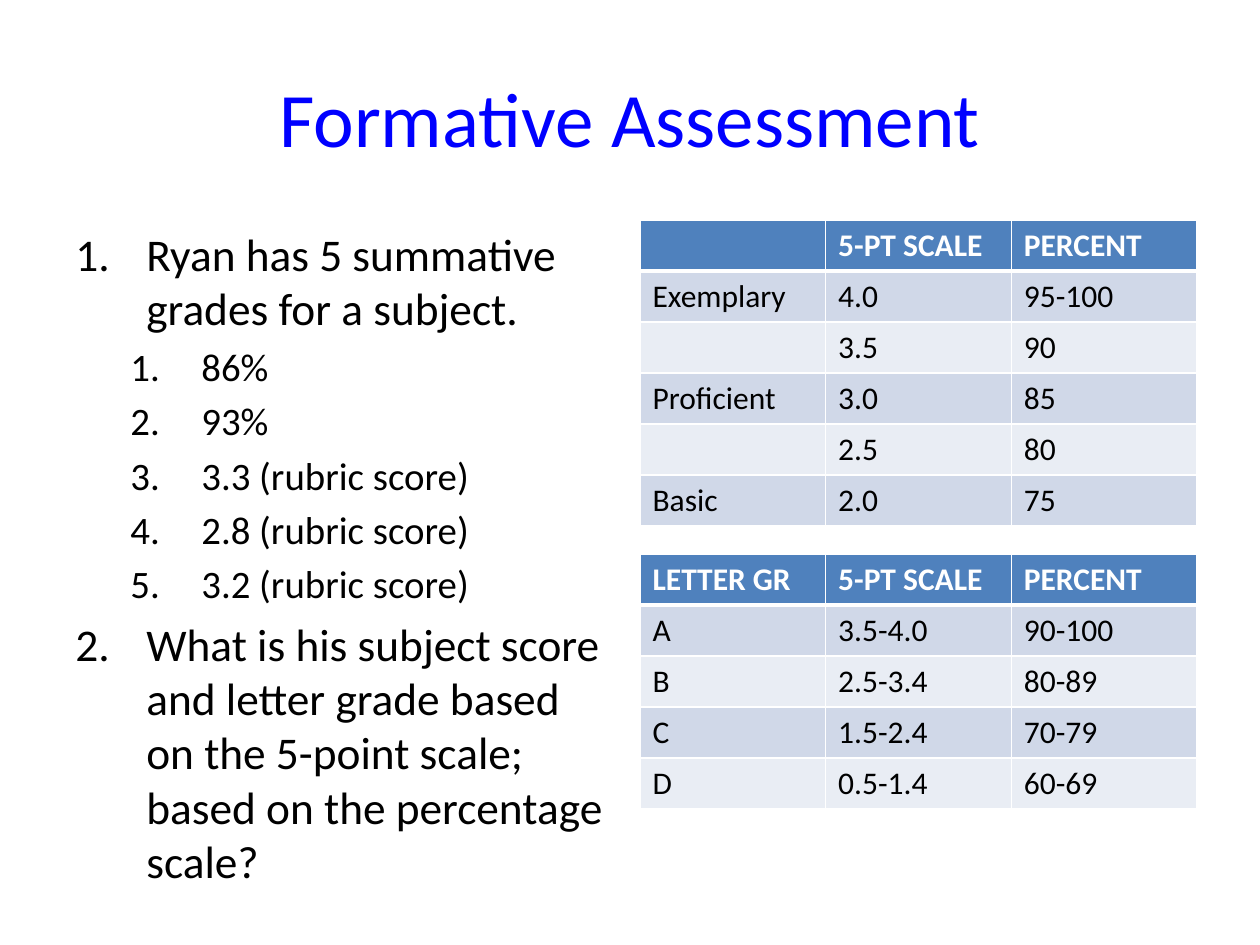
from lxml.etree import SubElement
from pptx import Presentation
from pptx.dml.color import RGBColor
from pptx.enum.text import MSO_ANCHOR, PP_ALIGN
from pptx.oxml.ns import qn
from pptx.util import Pt

FONT = "Calibri"
BLACK = "000000"
WHITE = "FFFFFF"
HEADER_FILL = "4F81BD"
BAND_FILLS = ("D0D8E8", "E9EDF4")
ROW_HEIGHT = 51

QUESTIONS = [
    (0, "Ryan has 5 summative grades for a subject."),
    (1, "86%"),
    (1, "93%"),
    (1, "3.3 (rubric score)"),
    (1, "2.8 (rubric score)"),
    (1, "3.2 (rubric score)"),
    (0, "What is his subject score and letter grade based on the 5-point scale; "
        "based on the percentage scale?"),
]
LEVELS = [
    {"size": 25.9, "before": 5.2, "indent": 71},
    {"size": 22.2, "before": 4.4, "indent": 126},
]
HANGING = 71

PROFICIENCY_ROWS = [
    ("", "5-PT SCALE", "PERCENT"),
    ("Exemplary", "4.0", "95-100"),
    ("", "3.5", "90"),
    ("Proficient", "3.0", "85"),
    ("", "2.5", "80"),
    ("Basic", "2.0", "75"),
]
LETTER_ROWS = [
    ("LETTER GR", "5-PT SCALE", "PERCENT"),
    ("A", "3.5-4.0", "90-100"),
    ("B", "2.5-3.4", "80-89"),
    ("C", "1.5-2.4", "70-79"),
    ("D", "0.5-1.4", "60-69"),
]


def px(value):
    return round(value * 914400 / 126)


def color(value):
    return RGBColor.from_string(value)


def add_span(para, text, size, ink, bold=False):
    span = para.add_run()
    span.text = text
    span.font.name = FONT
    span.font.size = Pt(size)
    span.font.bold = bold
    span.font.color.rgb = color(ink)


def add_frame(page, left, top, width, height):
    box = page.shapes.add_textbox(px(left), px(top), px(width), px(height))
    box.text_frame.word_wrap = True
    return box.text_frame


def add_title(page, left, top, width, height):
    frame = add_frame(page, left, top, width, height)
    frame.vertical_anchor = MSO_ANCHOR.MIDDLE
    para = frame.paragraphs[0]
    para.alignment = PP_ALIGN.CENTER
    add_span(para, "Formative Assessment", 44, "0000FF")


def number_para(para, indent):
    props = para._p.get_or_add_pPr()
    props.set("marL", str(px(indent)))
    props.set("indent", str(-px(HANGING)))
    SubElement(props, qn("a:buFont"), typeface="+mj-lt")
    SubElement(props, qn("a:buAutoNum"), type="arabicPeriod")


def add_questions(page, left, top, width, height):
    frame = add_frame(page, left, top, width, height)
    for index, (level, text) in enumerate(QUESTIONS):
        para = frame.add_paragraph() if index else frame.paragraphs[0]
        style = LEVELS[level]
        para.level = level
        para.space_before = Pt(style["before"])
        number_para(para, style["indent"])
        add_span(para, text, style["size"], BLACK)


def set_borders(cell, top, bottom):
    props = cell._tc.get_or_add_tcPr()
    for side, points in (("L", 1), ("R", 1), ("T", top), ("B", bottom)):
        line = SubElement(props, qn(f"a:ln{side}"), w=str(Pt(points)))
        fill = SubElement(line, qn("a:solidFill"))
        SubElement(fill, qn("a:srgbClr"), val=WHITE)


def add_scale_table(page, rows, left, top, width):
    columns = len(rows[0])
    table = page.shapes.add_table(
        len(rows), columns, px(left), px(top), px(width), px(ROW_HEIGHT * len(rows))
    ).table
    for row_index, row in enumerate(rows):
        header = row_index == 0
        for column_index, text in enumerate(row):
            cell = table.cell(row_index, column_index)
            set_borders(cell, 3 if row_index == 1 else 1, 3 if header else 1)
            cell.fill.solid()
            band = BAND_FILLS[(row_index - 1) % 2]
            cell.fill.fore_color.rgb = color(HEADER_FILL if header else band)
            if text:
                ink = WHITE if header else BLACK
                add_span(cell.text_frame.paragraphs[0], text, 18, ink, header)


def main():
    deck = Presentation()
    deck.slide_width, deck.slide_height = px(1260), px(945)
    page = deck.slides.add_slide(deck.slide_layouts[6])
    add_title(page, 63, 38, 1134, 157)
    add_questions(page, 63, 220, 557, 624)
    add_scale_table(page, PROFICIENCY_ROWS, 640, 220, 557)
    add_scale_table(page, LETTER_ROWS, 640, 554, 557)
    deck.save("out.pptx")


if __name__ == "__main__":
    main()
